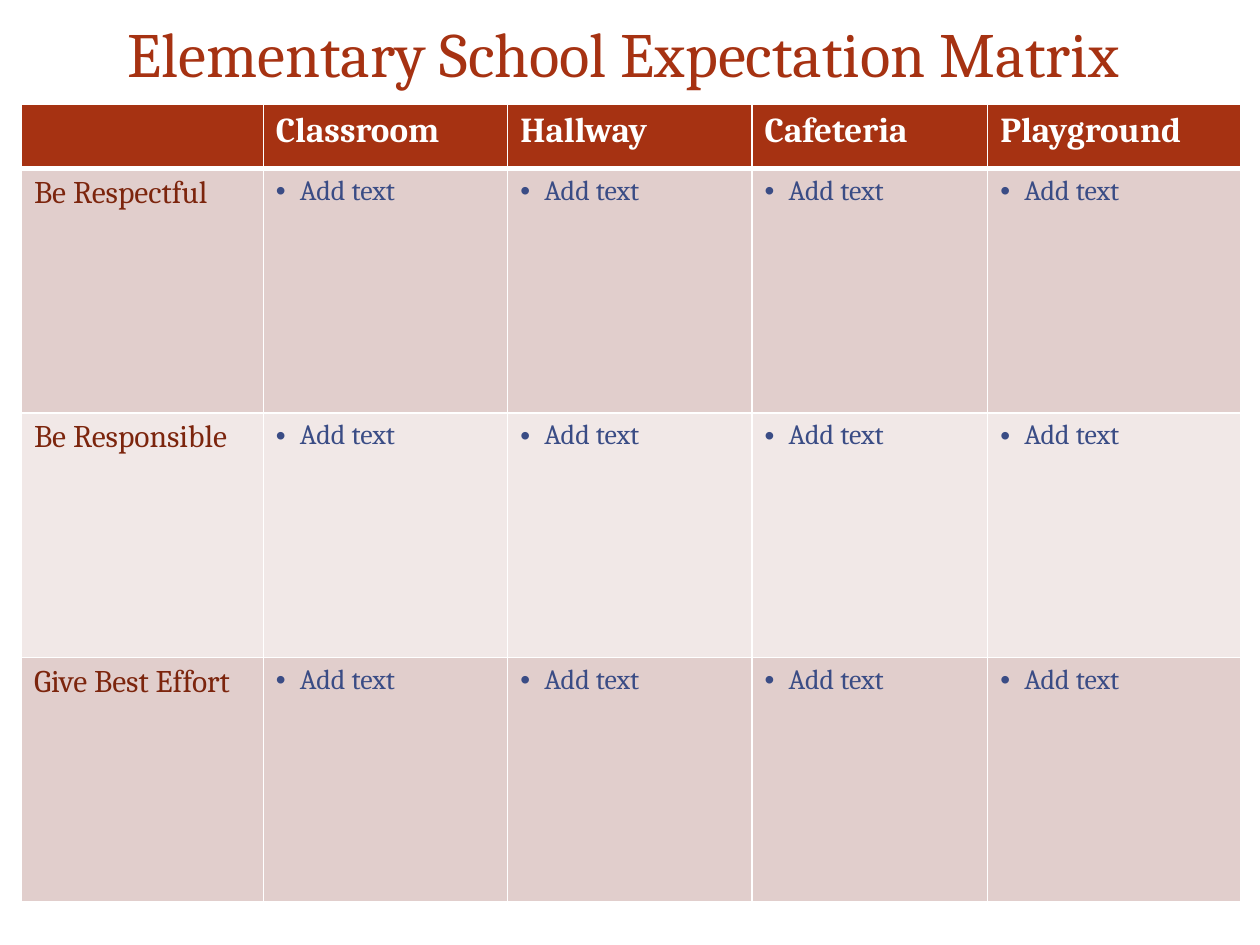
import pptx
import pptx.dml.color
import pptx.enum.text
import pptx.oxml
import pptx.oxml.ns
import pptx.util
from lxml import etree

Inches, Pt, RGBColor = pptx.util.Inches, pptx.util.Pt, pptx.dml.color.RGBColor
BRICK = RGBColor(0xA6, 0x32, 0x12)
RUST = RGBColor(0x7C, 0x25, 0x0D)
NAVY = RGBColor(0x3A, 0x4C, 0x85)
WHITE = RGBColor(0xFF, 0xFF, 0xFF)
ROSE = RGBColor(0xE1, 0xCE, 0xCC)
PALE = RGBColor(0xF1, 0xE8, 0xE7)

TITLE = {"size": Pt(36), "bold": False}, BRICK
PLACE = {"size": Pt(20), "bold": True}, WHITE
RULE = {"size": Pt(18), "bold": False}, RUST
ENTRY = {"size": Pt(16), "bold": False}, NAVY

places = ["", "Classroom", "Hallway", "Cafeteria", "Playground"]
rules = ["Be Respectful", "Be Responsible", "Give Best Effort"]
matrix = [places] + [[rule] + ["Add text"] * 4 for rule in rules]
column_widths = [1.92, 1.94, 1.94, 1.87, 2.01]
row_heights = [0.51] + [1.94] * len(rules)


def write(paragraph, text, style):
    values, color = style
    run = paragraph.add_run()
    run.text = text
    run.font.name = "Cambria"
    run.font.color.rgb = color
    for key, value in values.items():
        setattr(run.font, key, value)


def add_child(parent, tag, **attributes):
    return etree.SubElement(parent, pptx.oxml.ns.qn(tag), attributes)


presentation = pptx.Presentation()
presentation.slide_width, presentation.slide_height = Inches(10), Inches(7.5)
slide = presentation.slides.add_slide(presentation.slide_layouts[5])

# Title across the full width
heading = slide.shapes.title
placement = {"left": 0, "top": Inches(0.08),
             "width": presentation.slide_width, "height": Inches(0.67)}
for key, value in placement.items():
    setattr(heading, key, value)
heading.text_frame.vertical_anchor = pptx.enum.text.MSO_ANCHOR.MIDDLE
title_line = heading.text_frame.paragraphs[0]
title_line.alignment = pptx.enum.text.PP_ALIGN.CENTER
write(title_line, "Elementary School Expectation Matrix ", TITLE)

# Matrix grid
expectations = slide.shapes.add_table(
    len(matrix), len(places), Inches(0.17), Inches(0.83),
    Inches(sum(column_widths)), Inches(sum(row_heights))).table
for column, width in zip(expectations.columns, column_widths):
    column.width = Inches(width)
for row, height in zip(expectations.rows, row_heights):
    row.height = Inches(height)

# Cells: white borders, banded fills, bulleted entries
for r, texts in enumerate(matrix):
    for c, text in enumerate(texts):
        cell = expectations.cell(r, c)
        cell_properties = cell._tc.get_or_add_tcPr()
        for side in "LRTB":
            below_header = (r, side) in [(0, "B"), (1, "T")]
            border = add_child(cell_properties, f"a:ln{side}",
                               w=str(Pt(3 if below_header else 1)))
            add_child(add_child(border, "a:solidFill"), "a:srgbClr", val=str(WHITE))
        cell.fill.solid()
        cell.fill.fore_color.rgb = BRICK if r == 0 else ROSE if r % 2 else PALE

        line = cell.text_frame.paragraphs[0]
        if r and c:
            indent = Inches(0.19)
            paragraph_properties = line._p.get_or_add_pPr()
            paragraph_properties.set("marL", str(indent))
            paragraph_properties.set("indent", str(-indent))
            add_child(paragraph_properties, "a:buFont", typeface="Arial")
            add_child(paragraph_properties, "a:buChar", char="•")
        if text:
            write(line, text, PLACE if r == 0 else ENTRY if c else RULE)

presentation.save("out.pptx")
